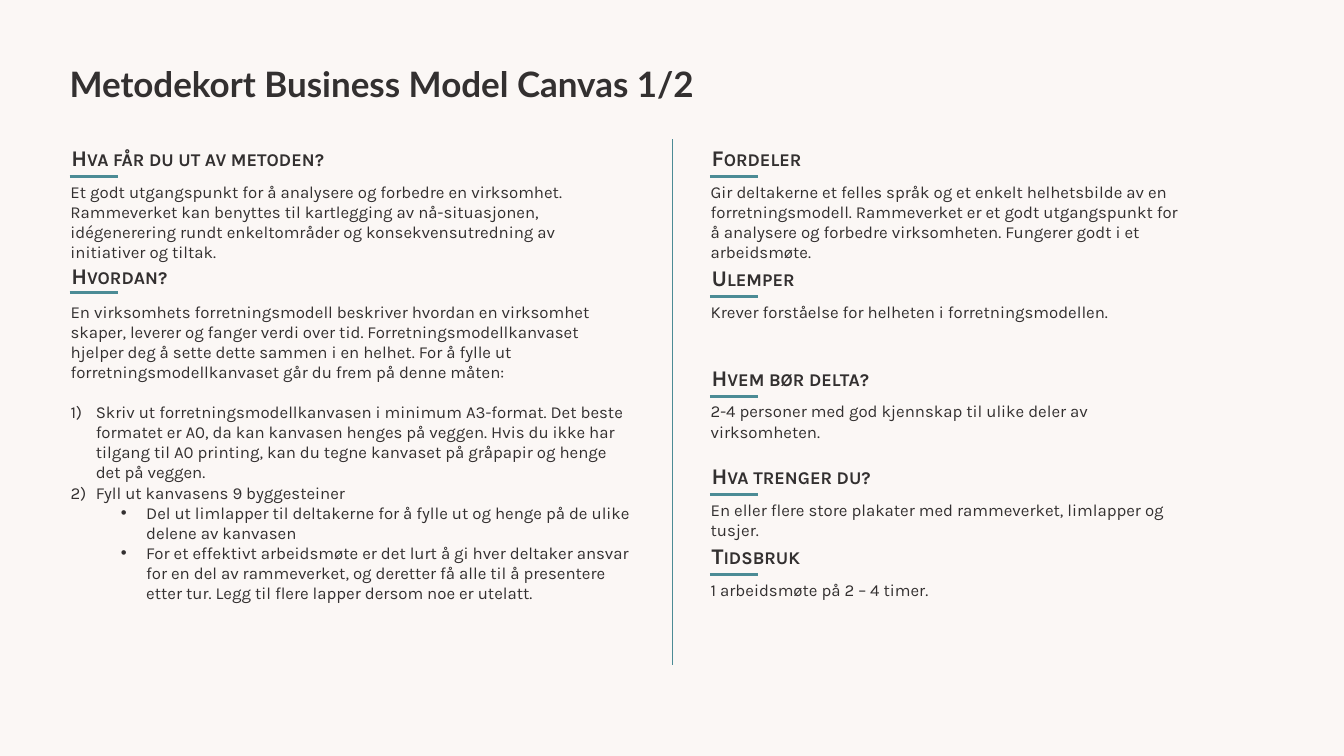
from lxml import etree
from pptx import Presentation
from pptx import util as u
from pptx.dml.color import RGBColor
from pptx.enum import shapes, text
from pptx.oxml.ns import qn

PX = 9144  # 100 px to the inch
INK = RGBColor(0x33, 0x30, 0x30)
TEAL = RGBColor(0x4B, 0x8B, 0x95)
CREAM = RGBColor(0xFB, 0xF7, 0xF5)


def write(para, words, size, face="Karla", bold=False):
    run = para.add_run()
    run.text = words
    font = run.font
    font.name, font.size, font.bold = face, u.Pt(size), bold
    font.color.rgb = INK
    return run


def rule(x1, y1, x2, y2, width):
    line = deck.shapes.add_connector(
        shapes.MSO_CONNECTOR.STRAIGHT, x1 * PX, y1 * PX, x2 * PX, y2 * PX)
    line.line.color.rgb = TEAL
    line.line.width = u.Pt(width)
    etree.SubElement(line._element.spPr, qn("a:effectLst"))


prs = Presentation()
prs.slide_width, prs.slide_height = 1333 * PX, 750 * PX
deck = prs.slides.add_slide(prs.slide_layouts[1])
deck.background.fill.solid()
deck.background.fill.fore_color.rgb = CREAM

# Title
title = deck.shapes.title
title.left, title.top, title.width, title.height = [n * PX for n in (69, 62, 1195, 42)]
frame = title.text_frame
frame.margin_left = frame.margin_right = frame.margin_top = frame.margin_bottom = 0
frame.vertical_anchor = text.MSO_ANCHOR.MIDDLE
frame.auto_size = text.MSO_AUTO_SIZE.NONE
para = frame.paragraphs[0]
para.alignment = text.PP_ALIGN.LEFT
para.line_spacing = u.Pt(30)
write(para, "Metodekort Business Model Canvas 1/2", 25, "Lato", True)

# Steps: words, level, bullet tag, bullet attributes, left indent, space before
NUM = ("a:buAutoNum", {"type": "arabicParenR"})
DOT = ("a:buChar", {"char": "•"})
steps = [
    ("En virksomhets forretningsmodell beskriver hvordan en virksomhet skaper, "
     "leverer og fanger verdi over tid. Forretningsmodellkanvaset hjelper deg å "
     "sette dette sammen i en helhet. For å fylle ut forretningsmodellkanvaset "
     "går du frem på denne måten:", 0, ("a:buNone", {}), 0, 0),
    ("Skriv ut forretningsmodellkanvasen i minimum A3-format. Det beste formatet "
     "er A0, da kan kanvasen henges på veggen. Hvis du ikke har tilgang til A0 "
     "printing, kan du tegne kanvaset på gråpapir og henge det på veggen.",
     0, NUM, 25, 14),
    ("Fyll ut kanvasens 9 byggesteiner", 0, NUM, 25, 0),
    ("Del ut limlapper til deltakerne for å fylle ut og henge på de ulike delene "
     "av kanvasen", 1, DOT, 75, 0),
    ("For et effektivt arbeidsmøte er det lurt å gi hver deltaker ansvar for en "
     "del av rammeverket, og deretter få alle til å presentere etter tur. Legg "
     "til flere lapper dersom noe er utelatt.", 1, DOT, 75, 0),
]
body = deck.placeholders[1]
body.left, body.top, body.width, body.height = [n * PX for n in (60, 294, 578, 313)]
frame = body.text_frame
frame.auto_size = text.MSO_AUTO_SIZE.NONE
for i, (words, level, (tag, attrs), indent, gap) in enumerate(steps):
    para = frame.add_paragraph() if i else frame.paragraphs[0]
    props = para._p.get_or_add_pPr()
    props.set("marL", str(indent * PX))
    props.set("indent", str(-25 * PX if indent else 0))
    if tag == "a:buChar":
        etree.SubElement(props, qn("a:buFont"), typeface="Arial")
    etree.SubElement(props, qn(tag), attrs)
    para.level = level
    para.space_before = u.Pt(gap)
    write(para, words, 12)

# Sections: left, heading top, rule height, text width, heading, text
cards = [
    (60, 138, 175, 578, "Hva får du ut av metoden?",
     "Et godt utgangspunkt for å analysere og forbedre en virksomhet. Rammeverket "
     "kan benyttes til kartlegging av nå-situasjonen, idégenerering rundt "
     "enkeltområder og konsekvensutredning av initiativer og tiltak."),
    (60, 255, 290, 578, "Hvordan?", None),
    (695, 138, 175, 491, "Fordeler",
     "Gir deltakerne et felles språk og et enkelt helhetsbilde av en "
     "forretningsmodell. Rammeverket er et godt utgangspunkt for å analysere og "
     "forbedre virksomheten. Fungerer godt i et arbeidsmøte."),
    (695, 257, 294, 491, "Ulemper",
     "Krever forståelse for helheten i forretningsmodellen."),
    (695, 356, 393, 491, "Hvem bør delta?",
     "2-4 personer med god kjennskap til ulike deler av virksomheten."),
    (695, 454, 491, 491, "Hva trenger du?",
     "En eller flere store plakater med rammeverket, limlapper og tusjer."),
    (695, 533, 570, 491, "Tidsbruk", "1 arbeidsmøte på 2 – 4 timer."),
]
for left, top, mark, wide, head, words in cards:
    parts = [(left + 1, top, 491, 37, head, 16)]
    if words:
        parts.append((left, mark, wide, 71 if len(words) > 100 else 30, words, 12))
    for x, y, w, h, label, size in parts:
        box = deck.shapes.add_textbox(x * PX, y * PX, w * PX, h * PX)
        box.text_frame.word_wrap = True
        box.text_frame.auto_size = text.MSO_AUTO_SIZE.SHAPE_TO_FIT_TEXT
        run = write(box.text_frame.paragraphs[0], label, size, bold=size == 16)
        if size == 16:
            run._r.get_or_add_rPr().set("cap", "small")
    rule(left + 9, mark, left + 57, mark, 2.25)

# Divider between the columns
rule(667, 138, 667, 660, 0.5)

prs.save("out.pptx")
